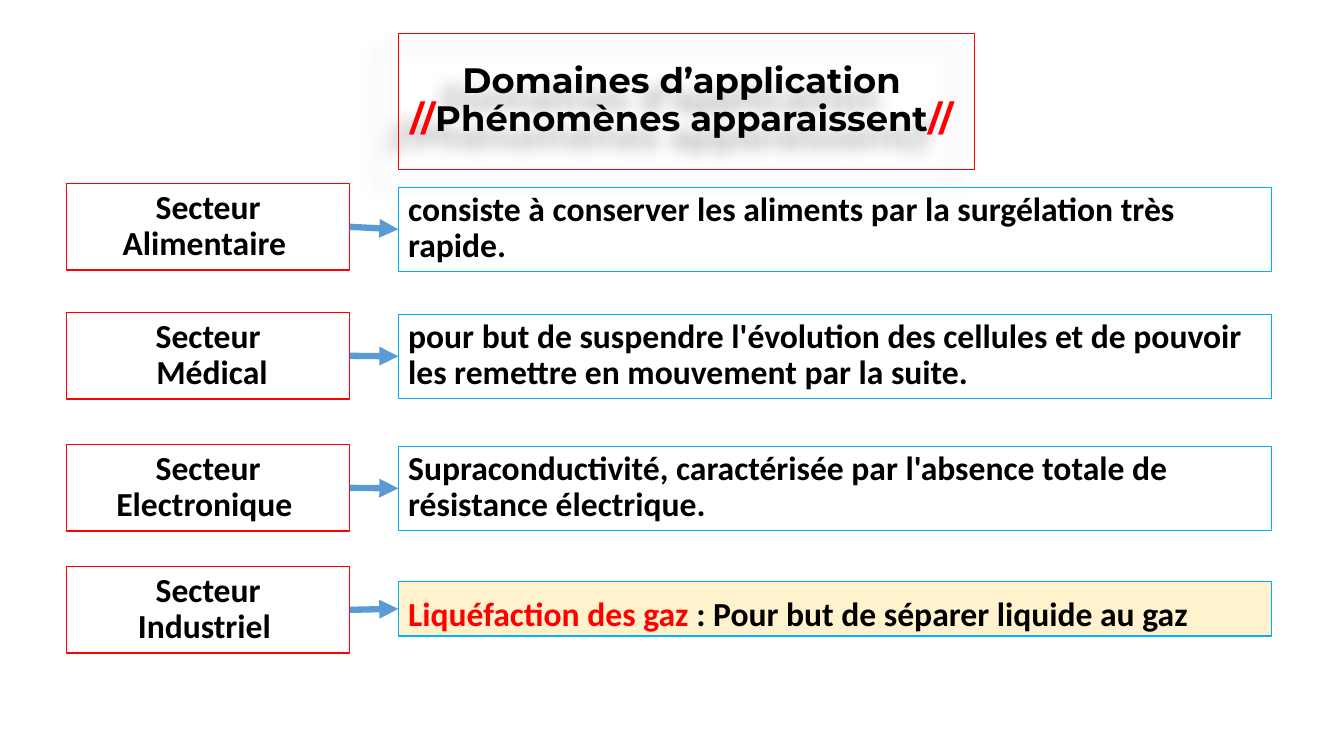
from lxml import etree
from pptx import Presentation
from pptx.dml.color import RGBColor
from pptx.enum.shapes import MSO_CONNECTOR, MSO_SHAPE
from pptx.enum.text import MSO_ANCHOR, MSO_AUTO_SIZE, PP_ALIGN
from pptx.oxml.ns import qn
from pptx.util import Emu, Pt

RECT = MSO_SHAPE.RECTANGLE
STRAIGHT = MSO_CONNECTOR.STRAIGHT
TOP, MIDDLE = MSO_ANCHOR.TOP, MSO_ANCHOR.MIDDLE
GROW = MSO_AUTO_SIZE.SHAPE_TO_FIT_TEXT
LEFT, CENTER, JUSTIFY = PP_ALIGN.LEFT, PP_ALIGN.CENTER, PP_ALIGN.JUSTIFY

PX = 9144
COLORS = {
    "black": "000000",
    "white": "FFFFFF",
    "red": "FF0000",
    "cyan": "00B0F0",
    "cream": "FFF2CC",
    "arrow": "5B9BD5",
}
SECTOR_X, SECTOR_W, SECTOR_H = 66, 281, 86
DETAIL_X, DETAIL_W = 395, 866
SECTORS = [
    (182, "Secteur Alimentaire "),
    (310, "Secteur\n Médical"),
    (441, "Secteur Electronique "),
    (562, "Secteur\nIndustriel "),
]
DETAILS = [
    (186, 83, [("consiste à conserver les aliments par la surgélation très rapide.", "black")]),
    (312, 83, [("pour but de suspendre l'évolution des cellules et de pouvoir "
                "les remettre en mouvement par la suite.", "black")]),
    (443, 83, [("Supraconductivité, caractérisée par l'absence totale de "
                "résistance électrique.", "black")]),
    (577, 54, [("Liquéfaction des gaz", "red"),
               (" : Pour but de séparer liquide au gaz", "black")]),
]
TITLE = [
    [("Domaines d’application ", "black")],
    [("//", "red"), ("Phénomènes apparaissent", "black"), ("// ", "red")],
]


def rgb(name):
    """Return the named colour."""
    return RGBColor.from_string(COLORS[name])


def add_box(s, x, y, w, h, line, width, fill=None):
    """Add an outlined rectangle, filled when a colour is given."""
    sp = s.shapes.add_shape(RECT, *(Emu(v * PX) for v in (x, y, w, h)))
    sp.shadow.inherit = False
    if fill:
        sp.fill.solid()
        sp.fill.fore_color.rgb = rgb(fill)
    else:
        sp.fill.background()
    sp.line.color.rgb = rgb(line)
    sp.line.width = Pt(width)
    sp.text_frame.word_wrap = True
    return sp


def style_paragraph(p, align, spacing=0.9, font="Calibri", size=24):
    """Set the bold font, alignment and line spacing of a paragraph."""
    p.alignment = align
    p.line_spacing = spacing
    p.font.name = font
    p.font.size = Pt(size)
    p.font.bold = True
    p.font.color.rgb = rgb("black")


def add_runs(p, runs):
    """Append coloured runs to a paragraph."""
    for text, color in runs:
        r = p.add_run()
        r.text = text
        r.font.color.rgb = rgb(color)


def add_text_shadow(sp):
    """Cast a soft shadow down and to the left."""
    effects = sp._element.spPr.find(qn("a:effectLst"))
    shadow = etree.SubElement(effects, qn("a:outerShdw"), blurRad=str(Pt(11.8)),
                              dist=str(Pt(19.7)), dir="8460000", algn="ctr", rotWithShape="0")
    color = etree.SubElement(shadow, qn("a:srgbClr"), val=COLORS["black"])
    etree.SubElement(color, qn("a:alpha"), val="28000")


def add_title(s):
    """Add the two-line title box."""
    sp = add_box(s, 395, 33, 572, 135, "red", 0.75)
    add_text_shadow(sp)
    sp.text_frame.vertical_anchor = MIDDLE
    p = sp.text_frame.paragraphs[0]
    style_paragraph(p, CENTER, font="Montserrat", size=25.2)
    for i, runs in enumerate(TITLE):
        if i:
            p.add_line_break()
        add_runs(p, runs)
    for br in p._p.findall(qn("a:br")):
        etree.SubElement(br, qn("a:rPr"), sz="2520", b="1")


def add_sector(s, y, text):
    """Add a sector name box."""
    sp = add_box(s, SECTOR_X, y, SECTOR_W, SECTOR_H, "red", 1, "white")
    tf = sp.text_frame
    tf.vertical_anchor = MIDDLE
    tf.text = text
    for p in tf.paragraphs:
        style_paragraph(p, CENTER)
    return sp


def add_detail(s, y, h, runs):
    """Add a description box, highlighted when it opens with a red term."""
    marked = len(runs) > 1
    sp = add_box(s, DETAIL_X, y, DETAIL_W, h, "cyan", 0.75, "cream" if marked else None)
    tf = sp.text_frame
    tf.vertical_anchor = TOP
    tf.auto_size = GROW
    p = tf.paragraphs[0]
    style_paragraph(p, JUSTIFY if marked else LEFT, 1.15 if marked else 0.9)
    add_runs(p, runs)
    return sp


def add_arrow(s, start, end):
    """Join the right side of one box to the left side of another."""
    cn = s.shapes.add_connector(STRAIGHT, 0, 0, 0, 0)
    cn.begin_connect(start, 3)
    cn.end_connect(end, 1)
    cn.line.color.rgb = rgb("arrow")
    cn.line.width = Pt(4.5)
    etree.SubElement(cn.line._get_or_add_ln(), qn("a:tailEnd"), type="triangle")
    etree.SubElement(cn._element.spPr, qn("a:effectLst"))


def main():
    """Build the slide and save it."""
    prs = Presentation()
    prs.slide_width, prs.slide_height = Emu(1333 * PX), Emu(750 * PX)
    s = prs.slides.add_slide(prs.slide_layouts[6])
    add_title(s)
    for sector, detail in zip(SECTORS, DETAILS):
        add_arrow(s, add_sector(s, *sector), add_detail(s, *detail))
    prs.save("out.pptx")


if __name__ == "__main__":
    main()
